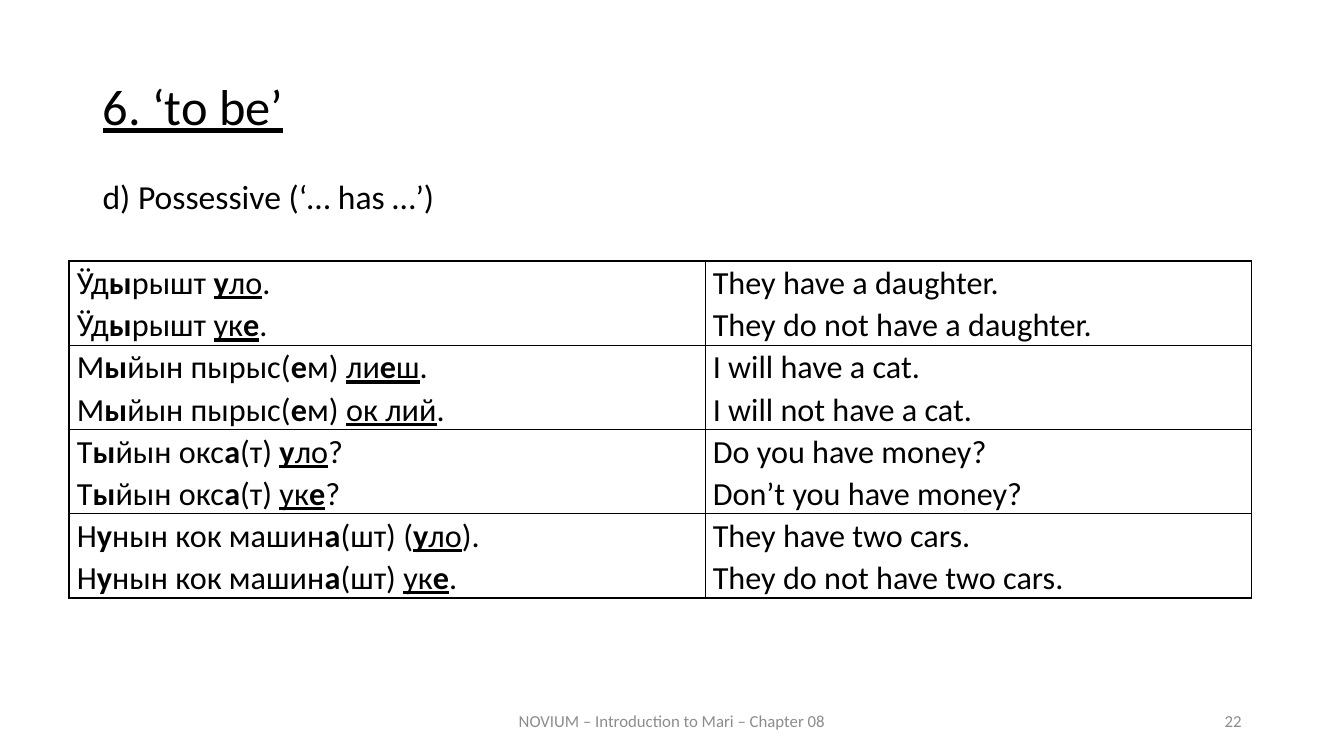
from lxml import etree
from pptx import Presentation
from pptx.dml.color import RGBColor
from pptx.enum.text import MSO_ANCHOR, PP_ALIGN
from pptx.oxml.ns import qn
from pptx.util import Pt

LEFT, CENTER, RIGHT, JUSTIFY = PP_ALIGN.LEFT, PP_ALIGN.CENTER, PP_ALIGN.RIGHT, PP_ALIGN.JUSTIFY
TOP, MIDDLE = MSO_ANCHOR.TOP, MSO_ANCHOR.MIDDLE

FONT, BLACK, GREY = "Calibri", "000000", "8C8C8C"

# In the markup, *…* is bold and _…_ is underlined.
HEADING = "_6. ‘to be’_"
SUBHEADING = "d) Possessive (‘… has …’)"
FOOTER = "NOVIUM – Introduction to Mari – Chapter 08"
PAGE = "22"
EXAMPLES = [
    (["Ӱд*ы*рышт _*у*ло_.", "Ӱд*ы*рышт _ук*е*_."],
     ["They have a daughter.", "They do not have a daughter."]),
    (["М*ы*йын пырыс(*е*м) _ли*е*ш_.", "М*ы*йын пырыс(*е*м) _ок лий_."],
     ["I will have a cat.", "I will not have a cat."]),
    (["Т*ы*йын окс*а*(т) _*у*ло_?", "Т*ы*йын окс*а*(т) _ук*е*_?"],
     ["Do you have money?", "Don’t you have money?"]),
    (["Н*у*нын кок машин*а*(шт) (_*у*ло_).", "Н*у*нын кок машин*а*(шт) _ук*е*_."],
     ["They have two cars.", "They do not have two cars."]),
]

MARGIN, BODY_WIDTH = 66.24, 828
FOOTER_TOP, FOOTER_HEIGHT = 500.4, 28.8
TABLE_LEFT, TABLE_TOP = 49.5, 186.5
COLUMN_WIDTHS = (454.3, 390.2)
ROW_HEIGHT = 60.2
OUTER, INNER = 1.5, 1


def colour(hex_code):
    return RGBColor.from_string(hex_code)


def write(paragraph, markup, size, ink=BLACK, align=LEFT, spacing=1.0, before=0):
    paragraph.alignment = align
    paragraph.line_spacing = spacing
    paragraph.space_before = Pt(before)
    for u, stretch in enumerate(markup.split("_")):
        for b, words in enumerate(stretch.split("*")):
            if words:
                run = paragraph.add_run()
                run.text = words
                font = run.font
                font.name, font.size = FONT, Pt(size)
                font.bold, font.underline = b % 2 == 1, u % 2 == 1
                font.color.rgb = colour(ink)


def add_line_of_text(slide, box, markup, anchor=TOP, **style):
    frame = slide.shapes.add_textbox(*map(Pt, box)).text_frame
    frame.word_wrap = True
    frame.vertical_anchor = anchor
    write(frame.paragraphs[0], markup, **style)


def set_borders(cell, widths):
    properties = cell._tc.get_or_add_tcPr()
    for position, (side, width) in enumerate(widths.items()):
        line = etree.Element(qn("a:" + side), w=str(Pt(width)))
        fill = etree.SubElement(line, qn("a:solidFill"))
        etree.SubElement(fill, qn("a:srgbClr"), val=BLACK)
        properties.insert(position, line)


def add_examples(slide):
    table = slide.shapes.add_table(
        len(EXAMPLES), len(COLUMN_WIDTHS), Pt(TABLE_LEFT), Pt(TABLE_TOP),
        Pt(sum(COLUMN_WIDTHS)), Pt(ROW_HEIGHT * len(EXAMPLES))).table
    table.first_row = table.horz_banding = False
    for column, width in zip(table.columns, COLUMN_WIDTHS):
        column.width = Pt(width)
    for r, example in enumerate(EXAMPLES):
        table.rows[r].height = Pt(ROW_HEIGHT)
        for c, sentences in enumerate(example):
            cell = table.cell(r, c)
            cell.fill.background()
            cell.vertical_anchor = MIDDLE
            cell.margin_left = cell.margin_right = Pt(5.4)
            cell.margin_top = cell.margin_bottom = 0
            frame = cell.text_frame
            for i, sentence in enumerate(sentences):
                paragraph = frame.add_paragraph() if i else frame.paragraphs[0]
                write(paragraph, sentence, 23, spacing=1.07)
            set_borders(cell, {
                "lnL": INNER if c else OUTER,
                "lnR": OUTER if c else INNER,
                "lnT": INNER if r else OUTER,
                "lnB": INNER,
            })


def main():
    deck = Presentation()
    deck.slide_width, deck.slide_height = Pt(960), Pt(540)
    slide = deck.slides.add_slide(deck.slide_layouts[6])
    add_line_of_text(slide, (MARGIN, 54.7, BODY_WIDTH, 59.8), HEADING,
                     size=36, align=JUSTIFY, spacing=0.9, before=12)
    add_line_of_text(slide, (MARGIN, 125.3, BODY_WIDTH, 46), SUBHEADING,
                     size=24, spacing=0.9, before=10)
    add_examples(slide)
    add_line_of_text(slide, (318, FOOTER_TOP, 324, FOOTER_HEIGHT), FOOTER, MIDDLE,
                     size=12, ink=GREY, align=CENTER)
    add_line_of_text(slide, (678, FOOTER_TOP, 216, FOOTER_HEIGHT), PAGE, MIDDLE,
                     size=12, ink=GREY, align=RIGHT)
    deck.save("out.pptx")


if __name__ == "__main__":
    main()
